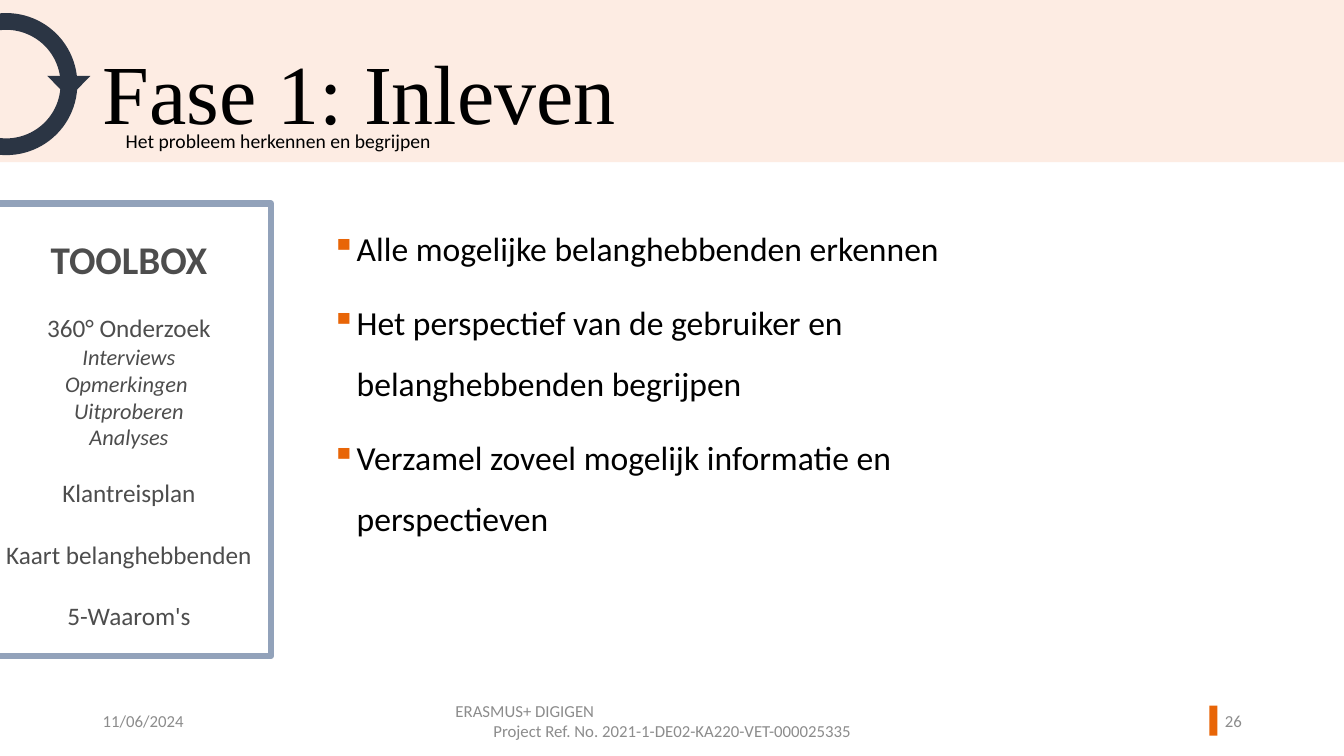
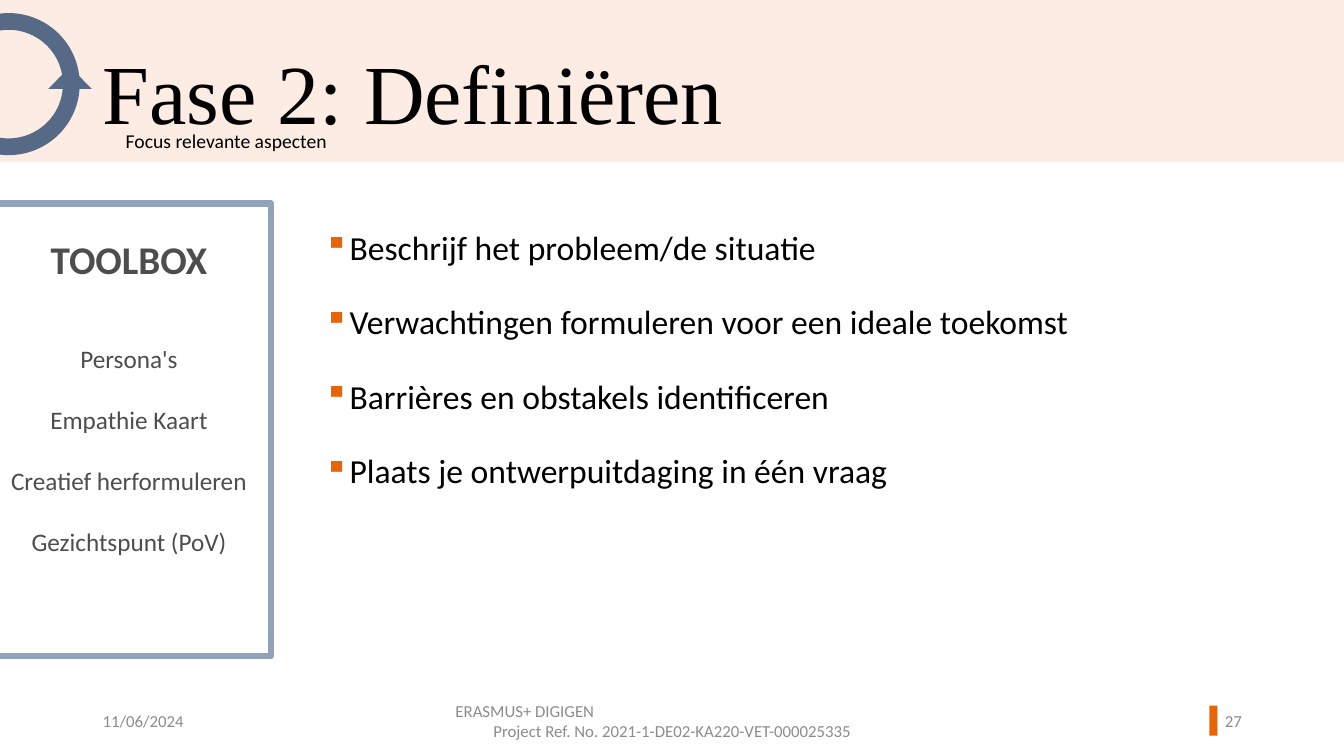
from dataclasses import dataclass

import lxml.etree
import pptx
import pptx.dml.color
import pptx.enum.shapes
import pptx.enum.text
import pptx.oxml.ns
import pptx.presentation
import pptx.shapes.autoshape
import pptx.slide
import pptx.text.text
import pptx.util

Cm = pptx.util.Cm
Pt = pptx.util.Pt
RGBColor = pptx.dml.color.RGBColor
Preset = pptx.enum.shapes.MSO_SHAPE
Align = pptx.enum.text.PP_ALIGN
Anchor = pptx.enum.text.MSO_ANCHOR

BLACK = RGBColor(0x00, 0x00, 0x00)
WHITE = RGBColor(0xFF, 0xFF, 0xFF)
PEACH = RGBColor(0xFD, 0xEC, 0xE3)
ORANGE = RGBColor(0xE8, 0x65, 0x07)
FOOTER_GREY = RGBColor(0x8C, 0x8C, 0x8C)
TOOL_GREY = RGBColor(0x4D, 0x4D, 0x4D)
FRAME_BLUE = RGBColor(0x92, 0xA2, 0xBA)
NAVY = RGBColor(0x2B, 0x35, 0x44)
SLATE = RGBColor(0x56, 0x6A, 0x88)

BODY_FONT = "Calibri"
TITLE_FONT = "Times New Roman"
TITLE_ONLY = 5
SLIDE_WIDTH = Cm(33.87)
FOOTER_TOP, FOOTER_HEIGHT = Cm(17.65), Cm(1.02)
MARGIN_LEFT = Cm(2.34)


@dataclass(frozen=True)
class Box:
    left: int
    top: int
    width: int
    height: int


@dataclass(frozen=True)
class TextStyle:
    size: float
    color: RGBColor = BLACK
    font: str = BODY_FONT
    bold: bool = False
    italic: bool = False


@dataclass(frozen=True)
class Line:
    text: str
    style: TextStyle
    align: Align = Align.LEFT
    space_before: float = 0


@dataclass(frozen=True)
class Emblem:
    color: RGBColor
    ring_left: int
    arrow_left: int
    arrow_top: int
    arrow_rotation: float


@dataclass(frozen=True)
class Phase:
    number: int
    title: str
    subtitle: str
    emblem: Emblem
    tools: tuple[Line, ...]
    goals: tuple[str, ...]
    goals_box: Box


TITLE_STYLE = TextStyle(60, font=TITLE_FONT)
SUBTITLE_STYLE = TextStyle(14)
GOAL_STYLE = TextStyle(24)
FOOTER_STYLE = TextStyle(12, FOOTER_GREY)
HEADING_STYLE = TextStyle(28, TOOL_GREY, bold=True)
TOOL_STYLE = TextStyle(18, TOOL_GREY)
DETAIL_STYLE = TextStyle(16, TOOL_GREY, italic=True)


def tool(name: str, space_before: float = 22) -> Line:
    return Line(name, TOOL_STYLE, Align.CENTER, space_before)


def detail(name: str) -> Line:
    return Line(name, DETAIL_STYLE, Align.CENTER)


PHASES = (
    Phase(
        26,
        "Fase 1: Inleven",
        "Het probleem herkennen en begrijpen",
        Emblem(NAVY, Cm(-1.63), Cm(1.19), Cm(1.91), 180),
        (
            tool("360° Onderzoek"),
            detail("Interviews"),
            detail("Opmerkingen "),
            detail("Uitproberen"),
            detail("Analyses"),
            tool("Klantreisplan", 19.5),
            tool("Kaart belanghebbenden"),
            tool("5-Waarom's"),
        ),
        (
            "Alle mogelijke belanghebbenden erkennen",
            "Het perspectief van de gebruiker en belanghebbenden begrijpen",
            "Verzamel zoveel mogelijk informatie en perspectieven",
        ),
        Box(Cm(8.1), Cm(5.11), Cm(18.54), Cm(8.81)),
    ),
    Phase(
        27,
        "Fase 2: Definiëren",
        "Focus relevante aspecten",
        Emblem(SLATE, Cm(-1.57), Cm(1.22), Cm(1.68), 0),
        (
            tool("Persona's", 44),
            tool("Empathie Kaart"),
            tool("Creatief herformuleren"),
            tool("Gezichtspunt (PoV)"),
        ),
        (
            "Beschrijf het probleem/de situatie",
            "Verwachtingen formuleren voor een ideale toekomst",
            "Barrières en obstakels identificeren",
            "Plaats je ontwerpuitdaging in één vraag",
        ),
        Box(Cm(7.92), Cm(5.08), Cm(23.62), Cm(12.09)),
    ),
)


def write_lines(frame: pptx.text.text.TextFrame, lines: tuple[Line, ...]) -> None:
    frame.word_wrap = True
    for index, line in enumerate(lines):
        paragraph = frame.add_paragraph() if index else frame.paragraphs[0]
        paragraph.alignment = line.align
        paragraph.space_before = Pt(line.space_before)
        run = paragraph.add_run()
        run.text = line.text
        run.font.name = line.style.font
        run.font.size = Pt(line.style.size)
        run.font.bold = line.style.bold
        run.font.italic = line.style.italic
        run.font.color.rgb = line.style.color


def add_text(
    slide: pptx.slide.Slide, box: Box, *lines: Line, anchor: Anchor = Anchor.TOP
) -> pptx.text.text.TextFrame:
    frame = slide.shapes.add_textbox(box.left, box.top, box.width, box.height).text_frame
    frame.vertical_anchor = anchor
    write_lines(frame, lines)
    return frame


def add_filled(
    shapes, preset: Preset, box: Box, color: RGBColor
) -> pptx.shapes.autoshape.Shape:
    """Add a flat shape without outline to a slide or a group."""
    shape = shapes.add_shape(preset, box.left, box.top, box.width, box.height)
    shape.shadow.inherit = False
    shape.fill.solid()
    shape.fill.fore_color.rgb = color
    shape.line.fill.background()
    return shape


def decorate_layout(slide: pptx.slide.Slide) -> None:
    """Put the title band and the page marker on the layout shared by all slides."""
    band = Box(Cm(0), Cm(0), SLIDE_WIDTH, Cm(4.09))
    page_marker = Box(Cm(30.48), Cm(17.78), Cm(0.2), Cm(0.76))
    for box, color in ((band, PEACH), (page_marker, ORANGE)):
        shape = add_filled(slide.shapes, Preset.RECTANGLE, box, color)
        slide.slide_layout.shapes.element.append(shape.element)


def format_title(slide: pptx.slide.Slide, text: str) -> None:
    title = slide.shapes.title
    title.left, title.top = MARGIN_LEFT, Cm(1.04)
    title.width, title.height = Cm(25.22), Cm(2.16)
    frame = title.text_frame
    frame.auto_size = pptx.enum.text.MSO_AUTO_SIZE.NONE
    frame.vertical_anchor = Anchor.TOP
    frame.margin_top, frame.margin_bottom = Cm(0.28), Cm(0)
    write_lines(frame, (Line(text, TITLE_STYLE),))
    frame.paragraphs[0].line_spacing = 0.9


def add_emblem(slide: pptx.slide.Slide, emblem: Emblem) -> None:
    parts = slide.shapes.add_group_shape().shapes
    ring_box = Box(emblem.ring_left, Cm(0.33), Cm(3.58), Cm(3.58))
    ring = add_filled(parts, Preset.DONUT, ring_box, emblem.color)
    ring.adjustments[0] = 0.118
    arrow_box = Box(emblem.arrow_left, emblem.arrow_top, Cm(1.09), Cm(0.56))
    arrow = add_filled(parts, Preset.ISOSCELES_TRIANGLE, arrow_box, emblem.color)
    arrow.rotation = emblem.arrow_rotation


def add_toolbox(slide: pptx.slide.Slide, tools: tuple[Line, ...]) -> None:
    box = Box(Cm(-0.33), Cm(5.13), Cm(7.16), Cm(11.4))
    toolbox = add_filled(slide.shapes, Preset.RECTANGLE, box, WHITE)
    toolbox.line.color.rgb = FRAME_BLUE
    toolbox.line.width = Pt(4.5)
    toolbox.text_frame.vertical_anchor = Anchor.TOP
    toolbox.text_frame.margin_top = Cm(0.79)
    heading = Line("TOOLBOX", HEADING_STYLE, Align.CENTER)
    write_lines(toolbox.text_frame, (heading, *tools))


def set_bullet(paragraph, color: RGBColor) -> None:
    properties = paragraph._p.get_or_add_pPr()
    indent = Cm(0.64)
    properties.set("marL", str(indent))
    properties.set("indent", str(-indent))
    qn = pptx.oxml.ns.qn
    bullet_color = lxml.etree.SubElement(properties, qn("a:buClr"))
    lxml.etree.SubElement(bullet_color, qn("a:srgbClr"), val=str(color))
    lxml.etree.SubElement(properties, qn("a:buChar"), char="▪")


def add_goals(slide: pptx.slide.Slide, goals: tuple[str, ...], box: Box) -> None:
    lines = (Line(goal, GOAL_STYLE, space_before=10) for goal in goals)
    for paragraph in add_text(slide, box, *lines).paragraphs:
        paragraph.line_spacing = 1.5
        set_bullet(paragraph, ORANGE)


def add_footer(slide: pptx.slide.Slide, number: int) -> None:
    fields = (
        (MARGIN_LEFT, Cm(7.62), (Line("11/06/2024", FOOTER_STYLE),)),
        (
            Cm(11.23),
            Cm(11.43),
            (
                Line("ERASMUS+ DIGIGEN", FOOTER_STYLE),
                Line(
                    "Project Ref. No. 2021-1-DE02-KA220-VET-000025335",
                    FOOTER_STYLE,
                    Align.CENTER,
                ),
            ),
        ),
        (Cm(29.9), Cm(1.65), (Line(str(number), FOOTER_STYLE, Align.RIGHT),)),
    )
    for left, width, lines in fields:
        box = Box(left, FOOTER_TOP, width, FOOTER_HEIGHT)
        add_text(slide, box, *lines, anchor=Anchor.MIDDLE)


def add_phase(presentation: pptx.presentation.Presentation, phase: Phase) -> pptx.slide.Slide:
    slide = presentation.slides.add_slide(presentation.slide_layouts[TITLE_ONLY])
    format_title(slide, phase.title)
    add_emblem(slide, phase.emblem)
    subtitle_box = Box(Cm(2.92), Cm(3.12), Cm(9.86), Cm(0.86))
    add_text(slide, subtitle_box, Line(phase.subtitle, SUBTITLE_STYLE))
    add_toolbox(slide, phase.tools)
    add_goals(slide, phase.goals, phase.goals_box)
    add_footer(slide, phase.number)
    return slide


def main() -> None:
    presentation = pptx.Presentation()
    presentation.slide_width, presentation.slide_height = SLIDE_WIDTH, Cm(19.05)
    slides = [add_phase(presentation, phase) for phase in PHASES]
    decorate_layout(slides[0])
    presentation.save("out.pptx")


if __name__ == "__main__":
    main()
